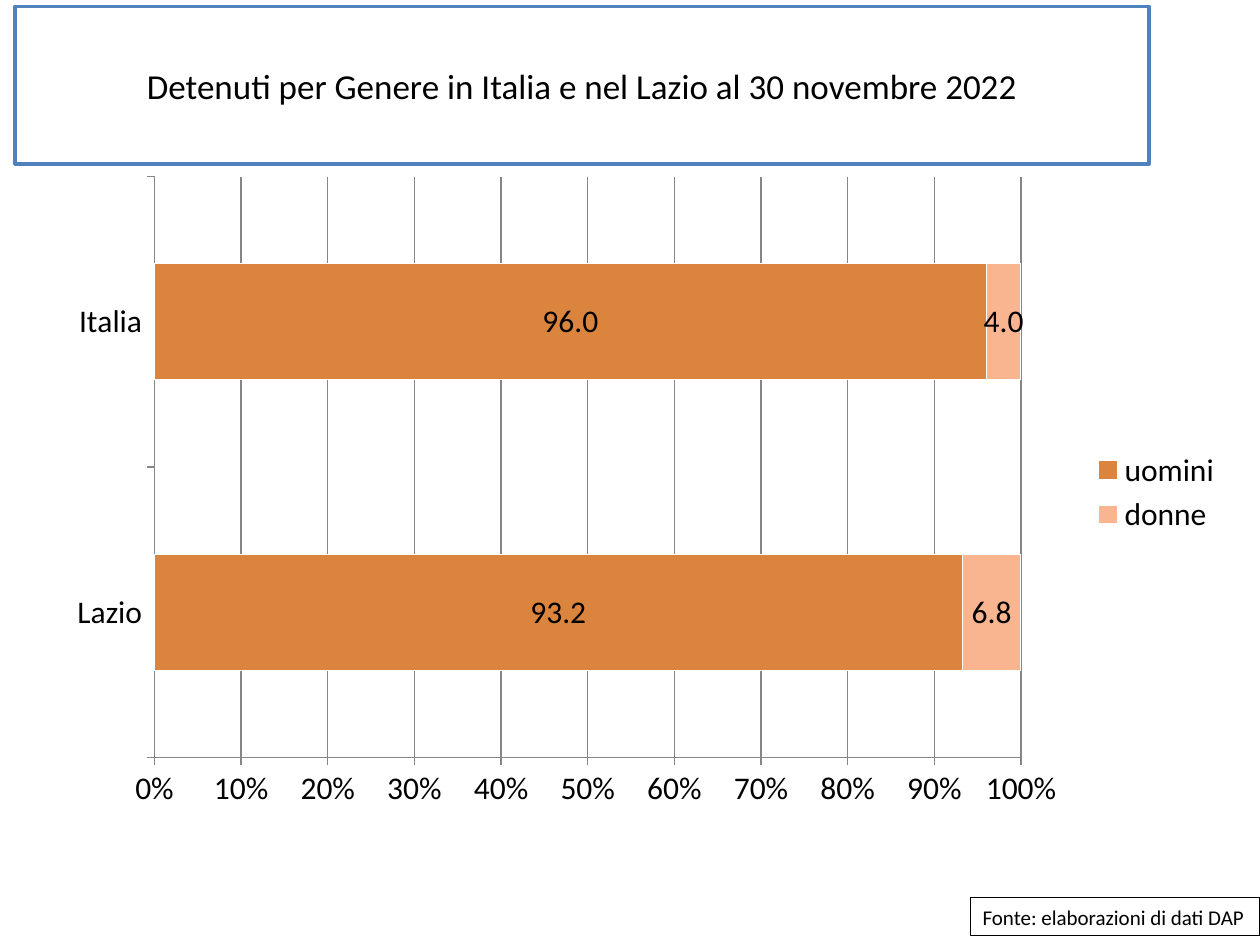
from lxml import etree
from pptx import Presentation
from pptx import util as u
from pptx.chart.data import CategoryChartData
from pptx.dml.color import RGBColor
from pptx.enum import chart as ch, shapes, text

COLORS = {"ink": "000000", "paper": "FFFFFF", "frame": "4F81BD",
          "uomini": "DB843D", "donne": "F9B590", "grid": "868686"}
FONT = "Calibri"


def rgb(name):
    return RGBColor.from_string(COLORS[name])


def style_font(font, size):
    font.size, font.name = u.Pt(size), FONT
    font.color.rgb = rgb("ink")


def write(frame, words, size=18, align=text.PP_ALIGN.LEFT, wrap=True):
    frame.word_wrap = wrap
    frame.vertical_anchor = text.MSO_ANCHOR.MIDDLE
    paragraph = frame.paragraphs[0]
    paragraph.alignment = align
    run = paragraph.add_run()
    run.text = words
    style_font(run.font, size)


class Board:
    """Current slide and its style; places are shares of the slide's size."""

    def __init__(self, deck):
        self.width, self.height = deck.slide_width, deck.slide_height
        self.slide = deck.slides.add_slide(deck.slide_layouts[6])

    def place(self, x, y, w, h):
        return (int(x * self.width), int(y * self.height),
                int(w * self.width), int(h * self.height))

    def box(self, area, words, line, weight, **fmt):
        box = self.slide.shapes.add_shape(shapes.MSO_SHAPE.RECTANGLE, *self.place(*area))
        box.shadow.inherit = False
        box.fill.solid()
        box.fill.fore_color.rgb = rgb("paper")
        box.line.color.rgb = rgb(line)
        box.line.width = u.Pt(weight)
        write(box.text_frame, words, **fmt)

    def stacked_bars(self, area, categories, series, plot_area):
        data = CategoryChartData(number_format="0.0")
        data.categories = categories
        for name, values in series.items():
            data.add_series(name, values)
        chart = self.slide.shapes.add_chart(
            ch.XL_CHART_TYPE.BAR_STACKED_100, *self.place(*area), data).chart
        style_font(chart.font, 18)
        chart.has_title = False
        chart.has_legend = True
        chart.legend.position = ch.XL_LEGEND_POSITION.RIGHT
        chart.legend.include_in_layout = False

        # Bars and their values
        plot = chart.plots[0]
        plot.gap_width, plot.overlap, plot.vary_by_categories = 150, 100, False
        for bars in plot.series:
            bars.format.fill.solid()
            bars.format.fill.fore_color.rgb = rgb(bars.name)
            bars.format.line.color.rgb = rgb("paper")
            labels = bars.data_labels
            labels.show_value = True
            labels.number_format, labels.number_format_is_linked = "0.0", False
            labels.position = ch.XL_LABEL_POSITION.CENTER
            style_font(labels.font, 18)

        # Axes
        percent = chart.value_axis
        percent.minimum_scale = 0
        percent.has_major_gridlines = True
        percent.major_gridlines.format.line.color.rgb = rgb("grid")
        percent.tick_labels.number_format = "0%"
        percent.tick_labels.number_format_is_linked = False
        for axis in (percent, chart.category_axis):
            axis.major_tick_mark = ch.XL_TICK_MARK.OUTSIDE
            axis.format.line.color.rgb = rgb("grid")
            style_font(axis.tick_labels.font, 18)
        self.fix_plot(chart, plot_area)

    def fix_plot(self, chart, plot_area):
        area = chart.element.find(".//{*}plotArea")
        space = "{" + etree.QName(area).namespace + "}"
        for old in area.findall(space + "layout"):
            area.remove(old)
        layout = etree.Element(space + "layout")
        area.insert(0, layout)
        manual = etree.SubElement(layout, space + "manualLayout")
        settings = [("layoutTarget", "inner"), ("xMode", "edge"), ("yMode", "edge")]
        settings += zip("xywh", plot_area)
        for tag, value in settings:
            etree.SubElement(manual, space + tag).set("val", str(value))


def main():
    deck = Presentation()
    deck.slide_width, deck.slide_height = u.Inches(10), u.Inches(7.5)
    board = Board(deck)

    # Title
    board.box((0.012, 0.0067, 0.9, 0.1667),
              "Detenuti per Genere in Italia e nel Lazio al 30 novembre 2022",
              "frame", 2, size=20, align=text.PP_ALIGN.CENTER)

    # Source note
    board.box((0.77, 0.95, 0.23, 0.04), "Fonte: elaborazioni di dati DAP",
              "ink", 0.75, size=12, wrap=False)

    # Share of men and women
    board.stacked_bars((0.043, 0.173, 0.937, 0.696), ["Lazio", "Italia"],
                       {"uomini": (93.2, 96.0), "donne": (6.8, 4.0)},
                       plot_area=(0.085, 0.02, 0.734, 0.883))
    deck.save("out.pptx")


if __name__ == "__main__":
    main()
